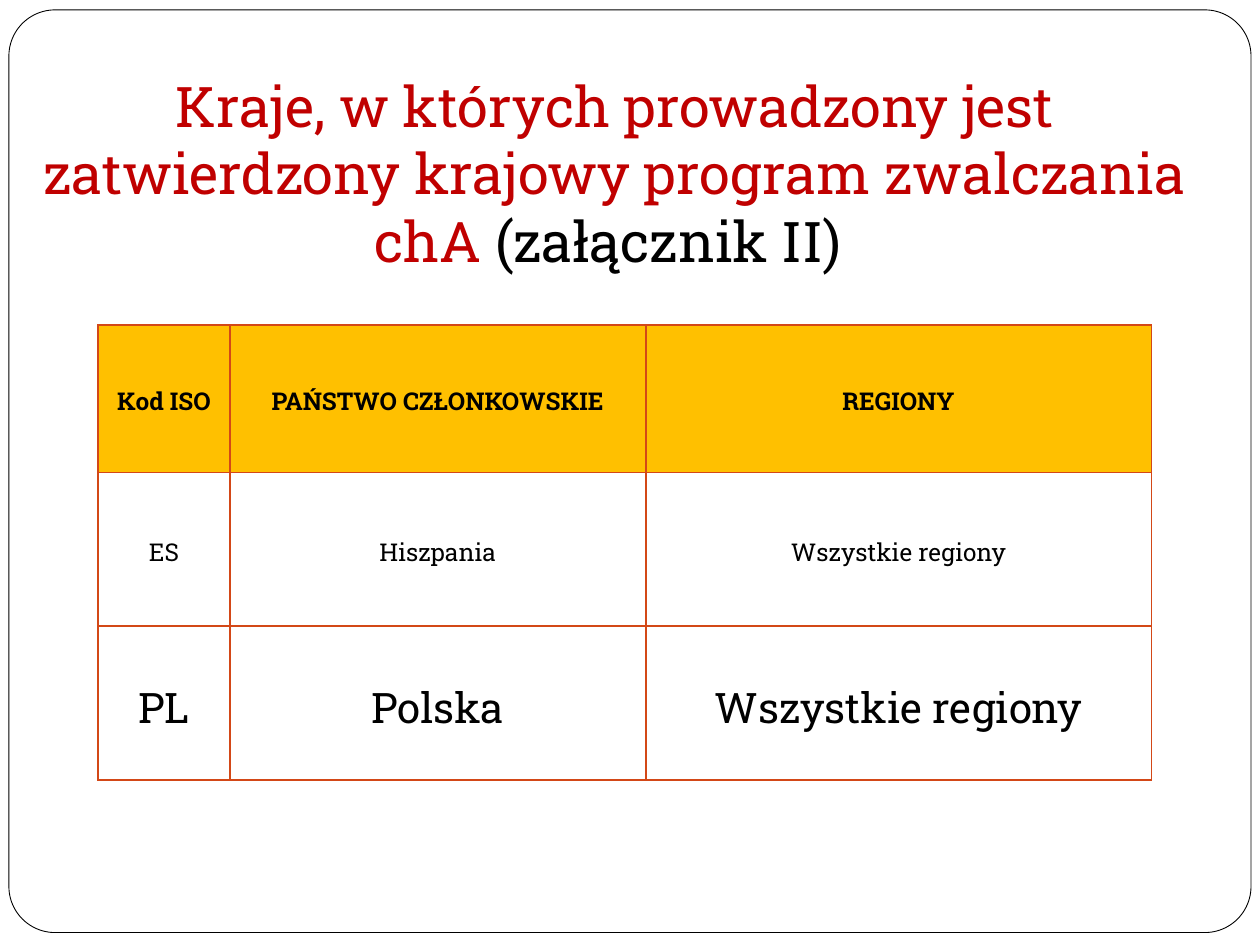
from lxml import etree
from pptx import Presentation
from pptx.dml.color import RGBColor
from pptx.enum.shapes import MSO_SHAPE
from pptx.enum.text import MSO_ANCHOR, MSO_AUTO_SIZE, PP_ALIGN
from pptx.oxml.ns import qn
from pptx.util import Cm, Pt

ROUNDED = MSO_SHAPE.ROUNDED_RECTANGLE
BOTTOM, MIDDLE = MSO_ANCHOR.BOTTOM, MSO_ANCHOR.MIDDLE
CENTER = PP_ALIGN.CENTER
NO_AUTOFIT = MSO_AUTO_SIZE.NONE

WHITE = RGBColor(0xFF, 0xFF, 0xFF)
BLACK = RGBColor(0x00, 0x00, 0x00)
RED = RGBColor(0xC0, 0x00, 0x00)
AMBER = RGBColor(0xFF, 0xC0, 0x00)
RUST = RGBColor(0xD3, 0x48, 0x17)

FONT = "Roboto Slab"
TITLE_ONLY = 5

HEADING = [
    ("Kraje, w których prowadzony jest zatwierdzony krajowy program zwalczania chA ", RED),
    ("(załącznik II) ", BLACK),
]
COUNTRIES = [
    ("Kod ISO", "PAŃSTWO CZŁONKOWSKIE", "REGIONY"),
    ("ES", "Hiszpania", "Wszystkie regiony"),
    ("PL", "Polska", "Wszystkie regiony"),
]
ROW_SIZES = [14, 14, 24]
COLUMN_SHARES = [0.125, 0.395, 0.48]
ROW_SHARES = [0.324, 0.338, 0.338]


def add_frame(slide, left, top, width, height):
    frame = slide.shapes.add_shape(ROUNDED, left, top, width, height)
    frame.adjustments[0] = 0.05
    frame.shadow.inherit = False
    frame.fill.solid()
    frame.fill.fore_color.rgb = WHITE
    frame.line.color.rgb = BLACK
    frame.line.width = Pt(0.5)
    slide.shapes.title._element.addprevious(frame._element)


def place_title(slide, left, top, width, height):
    title = slide.shapes.title
    title.left, title.top, title.width, title.height = left, top, width, height
    text = title.text_frame
    text.word_wrap = True
    text.auto_size = NO_AUTOFIT
    text.vertical_anchor = BOTTOM
    text.margin_left = text.margin_right = text.margin_bottom = Cm(0.25)
    text.margin_top = Cm(0.13)
    paragraph = text.paragraphs[0]
    paragraph.alignment = CENTER
    paragraph.font.name = FONT
    paragraph.font.size = Pt(32)
    for wording, color in HEADING:
        run = paragraph.add_run()
        run.text = wording
        run.font.color.rgb = color


def set_borders(cell):
    properties = cell._tc.get_or_add_tcPr()
    for position, side in enumerate(("a:lnL", "a:lnR", "a:lnT", "a:lnB")):
        border = etree.Element(qn(side), w=str(Pt(1)))
        fill = etree.SubElement(border, qn("a:solidFill"))
        etree.SubElement(fill, qn("a:srgbClr"), val=str(RUST))
        properties.insert(position, border)


def fill_cell(cell, wording, size, is_header):
    cell.vertical_anchor = MIDDLE
    cell.margin_left = cell.margin_right = Cm(0.18)
    cell.margin_top = cell.margin_bottom = 0
    if is_header:
        cell.fill.solid()
        cell.fill.fore_color.rgb = AMBER
    else:
        cell.fill.background()
    set_borders(cell)
    cell.text = wording
    paragraph = cell.text_frame.paragraphs[0]
    paragraph.alignment = CENTER
    paragraph.line_spacing = 1.15
    font = paragraph.font
    font.name = FONT
    font.size = Pt(size)
    font.bold = is_header
    font.color.rgb = BLACK


def add_country_table(slide, left, top, width, height):
    table = slide.shapes.add_table(
        len(COUNTRIES), len(COLUMN_SHARES), left, top, width, height
    ).table
    table.horz_banding = False
    for column, share in zip(table.columns, COLUMN_SHARES):
        column.width = round(width * share)
    for row, share in zip(table.rows, ROW_SHARES):
        row.height = round(height * share)
    for row_index, (entries, size) in enumerate(zip(COUNTRIES, ROW_SIZES)):
        for column_index, wording in enumerate(entries):
            cell = table.cell(row_index, column_index)
            fill_cell(cell, wording, size, row_index == 0)


def main():
    presentation = Presentation()
    presentation.slide_width, presentation.slide_height = Cm(25.4), Cm(19.05)
    slide = presentation.slides.add_slide(presentation.slide_layouts[TITLE_ONLY])
    add_frame(slide, Cm(0.18), Cm(0.2), Cm(25.04), Cm(18.6))
    place_title(slide, Cm(0.4), Cm(0.4), Cm(24), Cm(5.36))
    add_country_table(slide, Cm(1.98), Cm(6.55), Cm(21.23), Cm(9.17))
    presentation.save("out.pptx")


if __name__ == "__main__":
    main()
